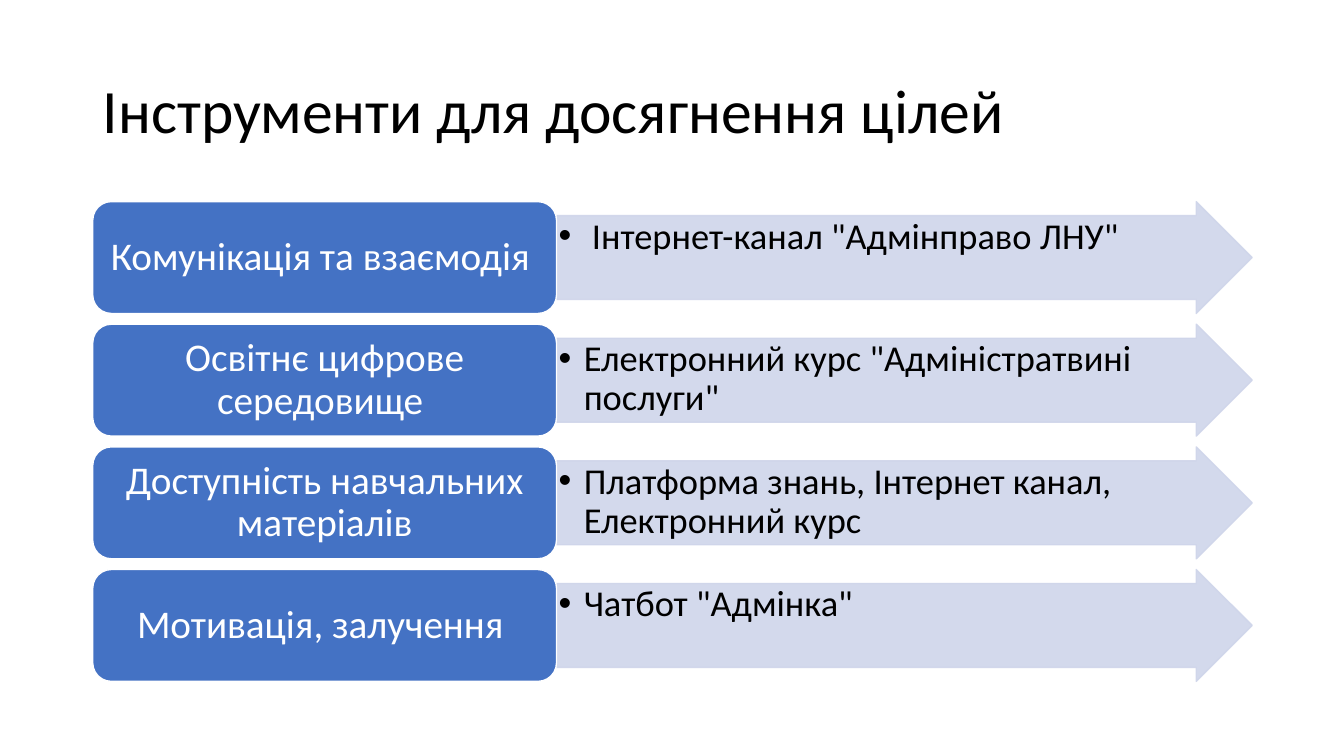
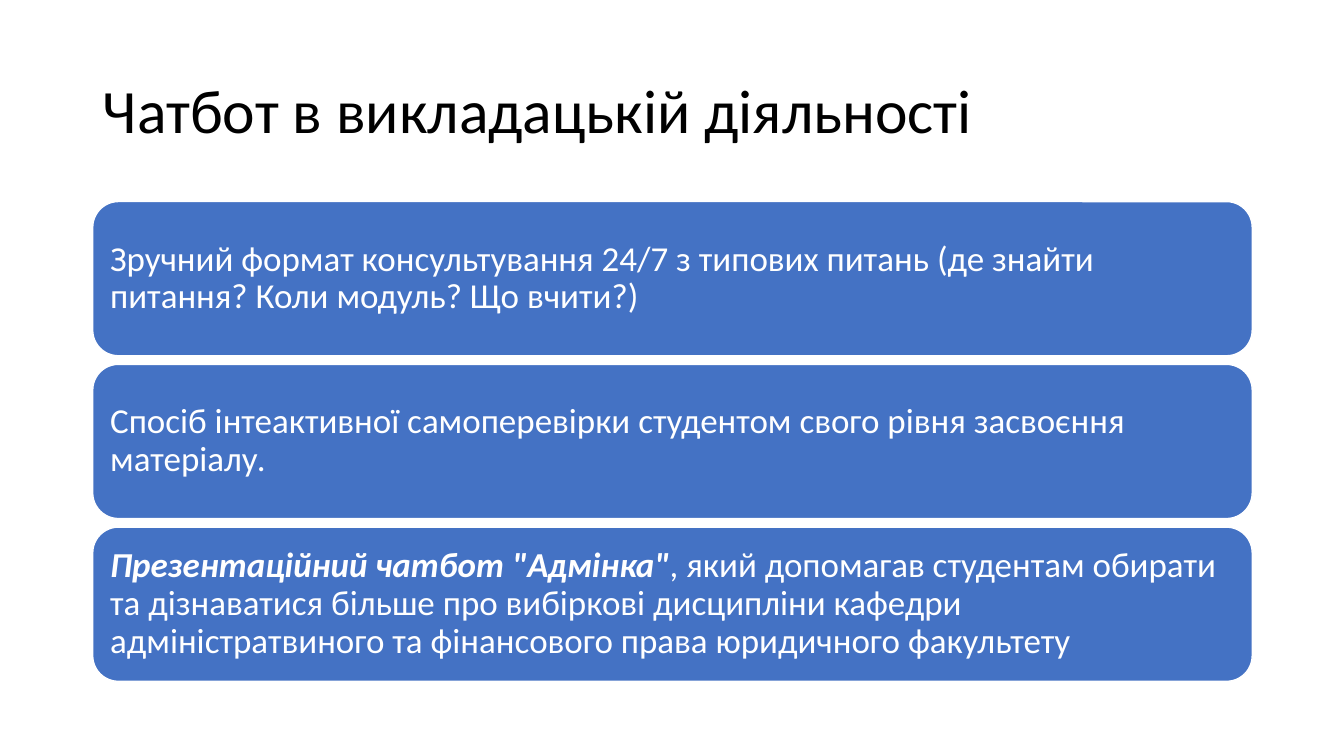
from dataclasses import dataclass

from lxml.etree import SubElement
from pptx import Presentation
from pptx.dml.color import RGBColor
from pptx.enum.shapes import MSO_SHAPE
from pptx.enum.text import MSO_ANCHOR, MSO_AUTO_SIZE, PP_ALIGN
from pptx.oxml.ns import qn
from pptx.util import Inches, Pt


@dataclass(frozen=True)
class Theme:
    font: str = "Calibri"
    black: RGBColor = RGBColor(0, 0, 0)
    white: RGBColor = RGBColor(255, 255, 255)
    blue: RGBColor = RGBColor(0x44, 0x72, 0xC4)
    pale: RGBColor = RGBColor(0xCF, 0xD5, 0xEA)
    title: int = 44
    label: int = 28
    item: int = 26
    card: int = 25


LOOK = Theme()

TOOLS = [
    ("Комунікація та взаємодія ", " Інтернет-канал \"Адмінправо ЛНУ\""),
    ("Освітнє цифрове середовище ", "Електронний курс \"Адміністратвині послуги\""),
    ("Доступність навчальних матеріалів", "Платформа знань, Інтернет канал, Електронний курс "),
    ("Мотивація, залучення ", "Чатбот \"Адмінка\""),
]

CARDS = [
    [("Зручний формат консультування 24/7 з типових питань "
      "(де знайти питання? Коли модуль? Що вчити?)", False)],
    [("Спосіб інтеактивної самоперевірки студентом свого рівня "
      "засвоєння матеріалу. ", False)],
    [("Презентаційний чатбот \"Адмінка\"", True),
     (", який допомагав студентам обирати та дізнаватися більше про вибіркові "
      "дисципліни кафедри адміністратвиного та фінансового права "
      "юридичного факультету ", False)],
]

LEFT, TOP = 0.92, 2
WIDE, TALL = 11.5, 4.76
SPLIT = 0.4
ROW, CARD = 1.11, 1.53


def write(frame, runs, size, color, align=PP_ALIGN.LEFT):
    para = frame.paragraphs[0]
    para.alignment = align
    para.line_spacing = 0.9
    for text, strong in runs:
        run = para.add_run()
        run.text = text
        font = run.font
        font.name, font.size = LOOK.font, Pt(size)
        font.bold = font.italic = strong
        font.color.rgb = color


def inset(frame, left, top, right, low):
    frame.margin_left, frame.margin_top = Inches(left), Inches(top)
    frame.margin_right, frame.margin_bottom = Inches(right), Inches(low)


def start(deck, text):
    slide = deck.slides.add_slide(deck.slide_layouts[5])
    title = slide.shapes.title
    title.left, title.top = Inches(LEFT), Inches(0.4)
    title.width, title.height = Inches(WIDE), Inches(1.45)
    frame = title.text_frame
    frame.auto_size = MSO_AUTO_SIZE.NONE
    frame.vertical_anchor = MSO_ANCHOR.MIDDLE
    write(frame, [(text, False)], LOOK.title, LOOK.black)
    return slide


def draw(slide, kind, left, top, width, height, fill, line):
    shape = slide.shapes.add_shape(
        kind, Inches(left), Inches(top), Inches(width), Inches(height))
    shape.shadow.inherit = False
    shape.fill.solid()
    shape.fill.fore_color.rgb = fill
    shape.line.color.rgb = line
    shape.line.width = Pt(1)
    shape.text_frame.word_wrap = True
    return shape


def box(slide, top, width, height, runs, size, pad, align=PP_ALIGN.LEFT):
    shape = draw(slide, MSO_SHAPE.ROUNDED_RECTANGLE, LEFT, top, width, height,
                 LOOK.blue, LOOK.white)
    frame = shape.text_frame
    frame.vertical_anchor = MSO_ANCHOR.MIDDLE
    inset(frame, *pad)
    write(frame, runs, size, LOOK.white, align)


def arrow(slide, top, text):
    width = WIDE * (1 - SPLIT)
    shape = draw(slide, MSO_SHAPE.RIGHT_ARROW, LEFT + WIDE * SPLIT, top,
                 width, ROW, LOOK.pale, LOOK.pale)
    shape.adjustments[0], shape.adjustments[1] = 0.75, 0.5
    for color in shape._element.spPr.iter(qn("a:srgbClr")):
        SubElement(color, qn("a:alpha"), val="90000")
    frame = shape.text_frame
    frame.vertical_anchor = MSO_ANCHOR.TOP
    inset(frame, 0.02, 0.02, 0.29, 0.02)
    props = frame.paragraphs[0]._p.get_or_add_pPr()
    props.set("marL", str(Inches(0.25)))
    props.set("indent", str(Inches(-0.25)))
    SubElement(props, qn("a:buFont"), typeface="Arial")
    SubElement(props, qn("a:buChar"), char="•")
    write(frame, [(text, False)], LOOK.item, LOOK.black)


def tops(count, height):
    step = (TALL - height) / (count - 1)
    return [TOP + i * step for i in range(count)]


def main():
    deck = Presentation()
    deck.slide_width, deck.slide_height = Inches(13.33), Inches(7.5)

    slide = start(deck, "Інструменти для досягнення цілей ")
    for top, (label, item) in zip(tops(len(TOOLS), ROW), TOOLS):
        arrow(slide, top, item)
        box(slide, top, WIDE * SPLIT, ROW, [(label, False)], LOOK.label,
            (0.12, 0.06, 0.12, 0.06), PP_ALIGN.CENTER)

    slide = start(deck, "Чатбот в викладацькій діяльності")
    for top, runs in zip(tops(len(CARDS), CARD), CARDS):
        box(slide, top, WIDE, CARD, runs, LOOK.card, (0.1, 0.1, 0.1, 0.1))

    deck.save("out.pptx")


if __name__ == "__main__":
    main()
